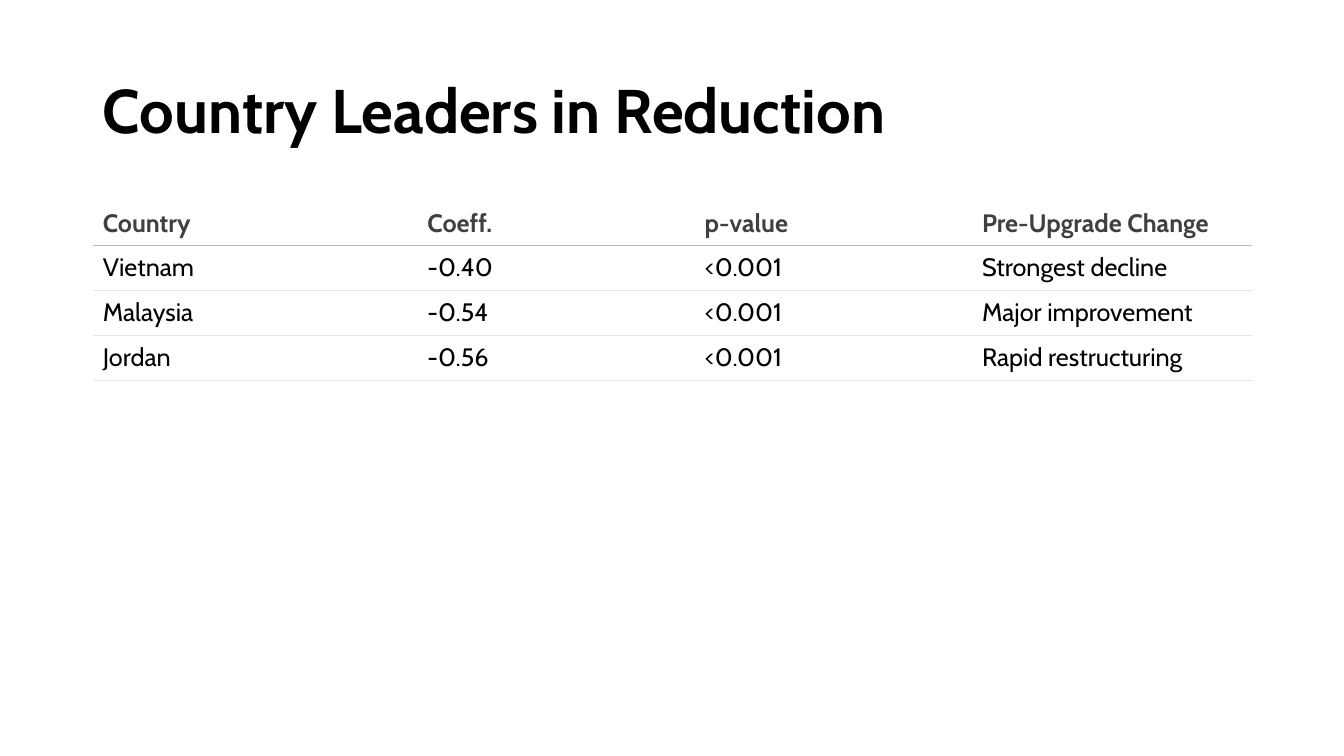
from lxml.etree import SubElement
from pptx import Presentation
from pptx.dml.color import RGBColor
from pptx.enum.text import MSO_ANCHOR, PP_ALIGN
from pptx.oxml.ns import qn
from pptx.util import Inches, Pt

# Content
TITLE = "Country Leaders in Reduction"
ROWS = [
    ("Country", "Coeff.", "p-value", "Pre-Upgrade Change"),
    ("Vietnam", "-0.40", "<0.001", "Strongest decline"),
    ("Malaysia", "-0.54", "<0.001", "Major improvement"),
    ("Jordan", "-0.56", "<0.001", "Rapid restructuring"),
]

# Layout and style
LEFT, WIDTH = 0.92, 11.5
TITLE_TOP, TITLE_HEIGHT = 0.4, 1.45
TABLE_TOP, ROW_HEIGHT = 1.99, 0.44
COLUMN_WIDTHS = (3.25, 2.75, 2.75, 2.75)
FIRST_INSET, INSET = 0.1, 0.07
FONT = "Cabin"
BLACK, GREY, WHITE = "000000", "404040", "FFFFFF"
HEADER_RULE, ROW_RULE, RULE_WIDTH = "BBBBBB", "E5E5E5", 0.33


def color(value):
    return RGBColor.from_string(value)


def write(frame, text, size=18, fill=BLACK, bold=False, spacing=1.0):
    frame.vertical_anchor = MSO_ANCHOR.MIDDLE
    para = frame.paragraphs[0]
    para.alignment = PP_ALIGN.LEFT
    para.line_spacing = spacing
    span = para.add_run()
    span.text = text
    span.font.name = FONT
    span.font.size = Pt(size)
    span.font.bold = bold
    span.font.color.rgb = color(fill)


def set_borders(cell, top, bottom):
    """Rule a cell above and below; None leaves an edge open."""
    properties = cell._tc.get_or_add_tcPr()
    edges = (("a:lnL", None), ("a:lnR", None), ("a:lnT", top), ("a:lnB", bottom))
    for position, (tag, rule) in enumerate(edges):
        line = SubElement(properties, qn(tag))
        properties.insert(position, line)
        if rule is None:
            SubElement(line, qn("a:noFill"))
        else:
            line.set("w", str(int(Pt(RULE_WIDTH))))
            fill = SubElement(line, qn("a:solidFill"))
            SubElement(fill, qn("a:srgbClr")).set("val", rule)


def add_title(page):
    title = page.shapes.title
    title.left, title.top = Inches(LEFT), Inches(TITLE_TOP)
    title.width, title.height = Inches(WIDTH), Inches(TITLE_HEIGHT)
    write(title.text_frame, TITLE, size=44, bold=True, spacing=0.9)


def add_country_table(page):
    table = page.shapes.add_table(
        len(ROWS), len(COLUMN_WIDTHS), Inches(LEFT), Inches(TABLE_TOP),
        Inches(WIDTH), Inches(ROW_HEIGHT * len(ROWS))).table
    table.horz_banding = False
    for column, width in zip(table.columns, COLUMN_WIDTHS):
        column.width = Inches(width)

    rule_above = None
    for row, values in enumerate(ROWS):
        header = row == 0
        rule_below = HEADER_RULE if header else ROW_RULE
        for column, text in enumerate(values):
            cell = table.cell(row, column)
            cell.fill.solid()
            cell.fill.fore_color.rgb = color(WHITE)
            cell.margin_left = Inches(INSET if column else FIRST_INSET)
            cell.margin_right = cell.margin_top = cell.margin_bottom = Inches(INSET)
            cell.vertical_anchor = MSO_ANCHOR.MIDDLE
            write(cell.text_frame, text, fill=GREY if header else BLACK, bold=header)
            set_borders(cell, rule_above, rule_below)
        rule_above = rule_below


def main():
    deck = Presentation()
    deck.slide_width, deck.slide_height = Inches(13.33), Inches(7.5)
    page = deck.slides.add_slide(deck.slide_layouts[5])  # Title Only
    add_title(page)
    add_country_table(page)
    deck.save("out.pptx")


if __name__ == "__main__":
    main()
